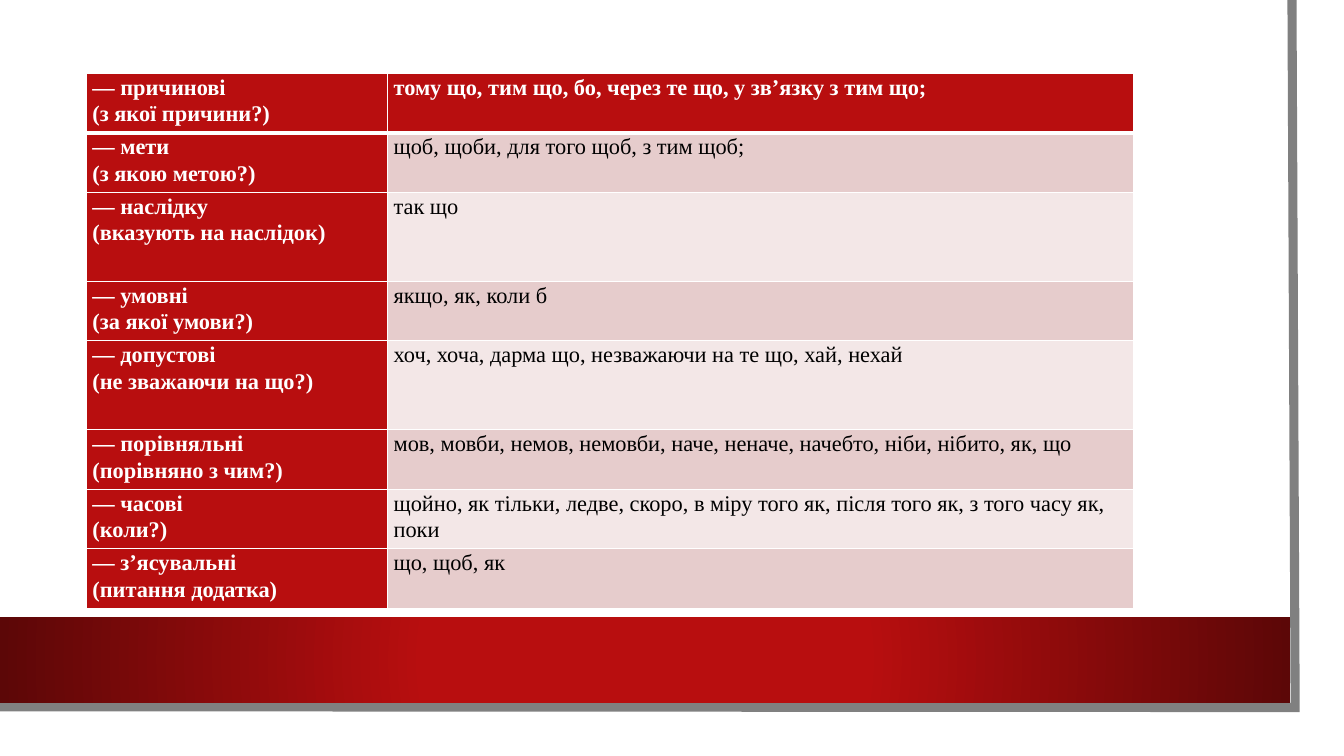
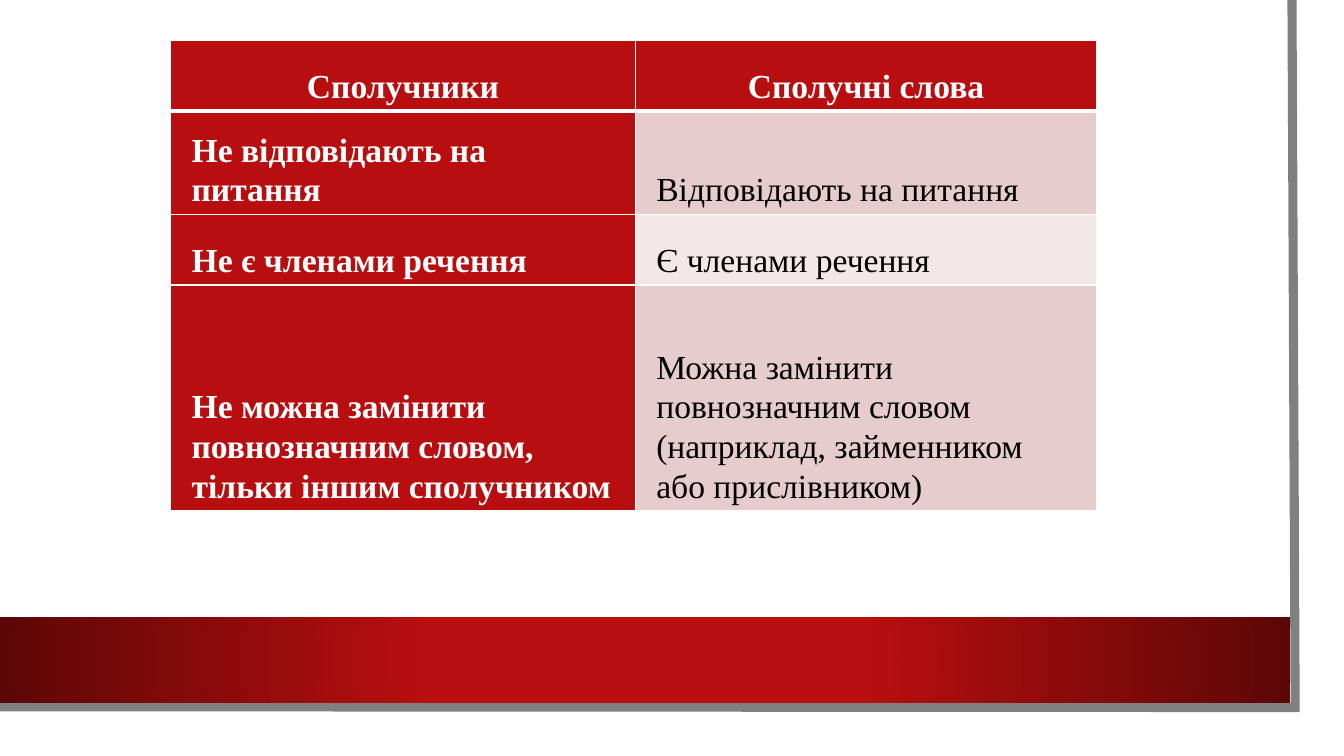
from dataclasses import dataclass

from lxml.etree import SubElement
from pptx import Presentation
from pptx.dml.color import RGBColor
from pptx.enum.shapes import MSO_SHAPE
from pptx.enum.text import MSO_ANCHOR, PP_ALIGN
from pptx.oxml import parse_xml
from pptx.oxml.ns import nsdecls, qn
from pptx.util import Cm, Pt


@dataclass(frozen=True)
class Theme:
    font: str = "Times New Roman"
    white: str = "FFFFFF"
    black: str = "000000"
    red: str = "B80E0F"
    dark_red: str = "5C0707"
    grey: str = "808080"
    bands: tuple[str, str] = ("F3E7E7", "E6CCCC")
    list_size: float = 16
    comparison_size: float = 24
    line_spacing: float = 1.07
    frame_width: float = 6.5
    border_width: float = 1
    header_border_width: float = 3


@dataclass(frozen=True)
class TableSpec:
    """A table with its lengths in centimetres."""
    left: float
    top: float
    columns: tuple[float, ...]
    rows: tuple[float, ...]
    texts: tuple[tuple[str, str], ...]
    size: float
    margins: tuple[float, float]
    anchor: MSO_ANCHOR = MSO_ANCHOR.TOP
    header_alignment: PP_ALIGN = PP_ALIGN.LEFT


THEME = Theme()

CONJUNCTIONS = TableSpec(
    left=2.18, top=1.85,
    columns=(7.59, 18.8),
    rows=(1.5, 1.5, 2.24, 1.5, 2.24, 1.5, 1.5, 1.5),
    texts=(
        ("— причинові\n(з якої причини?)",
         "тому що, тим що, бо, через те що, у зв’язку з тим що;"),
        ("— мети\n(з якою метою?)", "щоб, щоби, для того щоб, з тим щоб;"),
        ("— наслідку\n(вказують на наслідок)", "так що"),
        ("— умовні\n(за якої умови?)", "якщо, як, коли б"),
        ("— допустові\n(не зважаючи на що?)",
         "хоч, хоча, дарма що, незважаючи на те що, хай, нехай"),
        ("— порівняльні\n(порівняно з чим?)",
         "мов, мовби, немов, немовби, наче, неначе, начебто, ніби, нібито, як, що"),
        ("— часові\n(коли?)",
         "щойно, як тільки, ледве, скоро, в міру того як, після того як, "
         "з того часу як, поки"),
        ("— з’ясувальні\n(питання додатка)", "що, щоб, як"),
    ),
    size=THEME.list_size,
    margins=(0.15, 0),
)

COMPARISON = TableSpec(
    left=4.3, top=1.02,
    columns=(11.71, 11.63),
    rows=(1.78, 2.6, 1.78, 5.69),
    texts=(
        ("Сполучники", "Сполучні слова"),
        ("Не відповідають на питання", "Відповідають на питання"),
        ("Не є членами речення", "Є членами речення"),
        ("Не можна замінити повнозначним словом, тільки іншим сполучником",
         "Можна замінити повнозначним словом (наприклад, займенником або прислівником)"),
    ),
    size=THEME.comparison_size,
    margins=(0.53, 0.13),
    anchor=MSO_ANCHOR.BOTTOM,
    header_alignment=PP_ALIGN.CENTER,
)


def write_text(text_frame, text: str, *, size: float, color: str,
               bold: bool, alignment: PP_ALIGN) -> None:
    text_frame.text = text
    for paragraph in text_frame.paragraphs:
        paragraph.alignment = alignment
        paragraph.line_spacing = THEME.line_spacing
        for run in paragraph.runs:
            run.font.name = THEME.font
            run.font.size = Pt(size)
            run.font.bold = bold
            run.font.color.rgb = RGBColor.from_string(color)


def set_borders(cell, row_index: int) -> None:
    """Draw white cell borders, with a thicker one under the header row."""
    properties = cell._tc.get_or_add_tcPr()
    heavy_side = {0: "B", 1: "T"}.get(row_index)
    for position, side in enumerate("LRTB"):
        width = THEME.header_border_width if side == heavy_side else THEME.border_width
        properties.insert(position, parse_xml(
            f'<a:ln{side} {nsdecls("a")} w="{Pt(width)}"><a:solidFill>'
            f'<a:srgbClr val="{THEME.white}"/></a:solidFill></a:ln{side}>'))


def add_table(slide, spec: TableSpec) -> None:
    table = slide.shapes.add_table(
        len(spec.rows), len(spec.columns), Cm(spec.left), Cm(spec.top),
        Cm(sum(spec.columns)), Cm(sum(spec.rows))).table
    table.horz_banding = False
    table.first_col = True
    for column, width in zip(table.columns, spec.columns):
        column.width = Cm(width)
    for row_index, (height, texts) in enumerate(zip(spec.rows, spec.texts)):
        table.rows[row_index].height = Cm(height)
        for column_index, text in enumerate(texts):
            cell = table.cell(row_index, column_index)
            is_header = row_index == 0
            is_heading = is_header or column_index == 0
            fill = THEME.red if is_heading else THEME.bands[row_index % 2]
            cell.fill.solid()
            cell.fill.fore_color.rgb = RGBColor.from_string(fill)
            set_borders(cell, row_index)
            cell.vertical_anchor = spec.anchor
            cell.margin_left = cell.margin_right = Cm(spec.margins[0])
            cell.margin_top = cell.margin_bottom = Cm(spec.margins[1])
            write_text(cell.text_frame, text, size=spec.size, bold=is_heading,
                       color=THEME.white if is_heading else THEME.black,
                       alignment=spec.header_alignment if is_header else PP_ALIGN.LEFT)


def add_rectangle(shapes, left: float, top: float, width: float, height: float):
    shape = shapes.add_shape(MSO_SHAPE.RECTANGLE, Cm(left), Cm(top), Cm(width), Cm(height))
    shape.shadow.inherit = False
    shape.line.fill.background()
    return shape


def add_page(shapes):
    page = add_rectangle(shapes, 0, 0, 33.27, 18.47)
    page.fill.solid()
    page.fill.fore_color.rgb = RGBColor.from_string(THEME.white)
    return page


def add_page_edge(shapes):
    """Draw the grey line along the right and bottom of the page."""
    builder = shapes.build_freeform(Cm(32.56), 0)
    builder.add_line_segments(
        [(Cm(32.64), Cm(17.83)), (Cm(-0.08), Cm(17.81))], close=False)
    edge = builder.convert_to_shape()
    edge.shadow.inherit = False
    edge.fill.background()
    edge.line.width = Pt(THEME.frame_width)
    edge.line.color.rgb = RGBColor.from_string(THEME.grey)
    SubElement(edge.element.spPr.find(qn("a:ln")), qn("a:miter"), lim="800000")
    return edge


def add_band(shapes):
    """Draw the red band, darkening from its centre outwards."""
    band = add_rectangle(shapes, 0, 15.55, 32.51, 2.16)
    band.fill.solid()
    solid_fill = band.element.spPr.find(qn("a:solidFill"))
    band.element.spPr.replace(solid_fill, parse_xml(
        f'<a:gradFill {nsdecls("a")} rotWithShape="1"><a:gsLst>'
        f'<a:gs pos="34000"><a:srgbClr val="{THEME.red}"/></a:gs>'
        f'<a:gs pos="100000"><a:srgbClr val="{THEME.dark_red}"/></a:gs></a:gsLst>'
        '<a:path path="circle"><a:fillToRect l="50000" t="50000" r="50000" b="50000"/>'
        '</a:path></a:gradFill>'))
    return band


def decorate_layout(layout, slide) -> None:
    """Draw the shared decoration through a slide and move it to the layout."""
    for placeholder in list(layout.placeholders):
        layout.shapes.element.remove(placeholder.element)
    decorations = [add(slide.shapes) for add in (add_page, add_page_edge, add_band)]
    for decoration in decorations:
        layout.shapes.element.append(decoration.element)


def main() -> None:
    presentation = Presentation()
    presentation.slide_width = Cm(33.87)
    presentation.slide_height = Cm(19.05)
    layout = presentation.slide_layouts[6]
    slides = [presentation.slides.add_slide(layout) for _ in range(2)]
    decorate_layout(layout, slides[0])
    for slide, spec in zip(slides, (CONJUNCTIONS, COMPARISON)):
        add_table(slide, spec)
    presentation.save("out.pptx")


if __name__ == "__main__":
    main()
